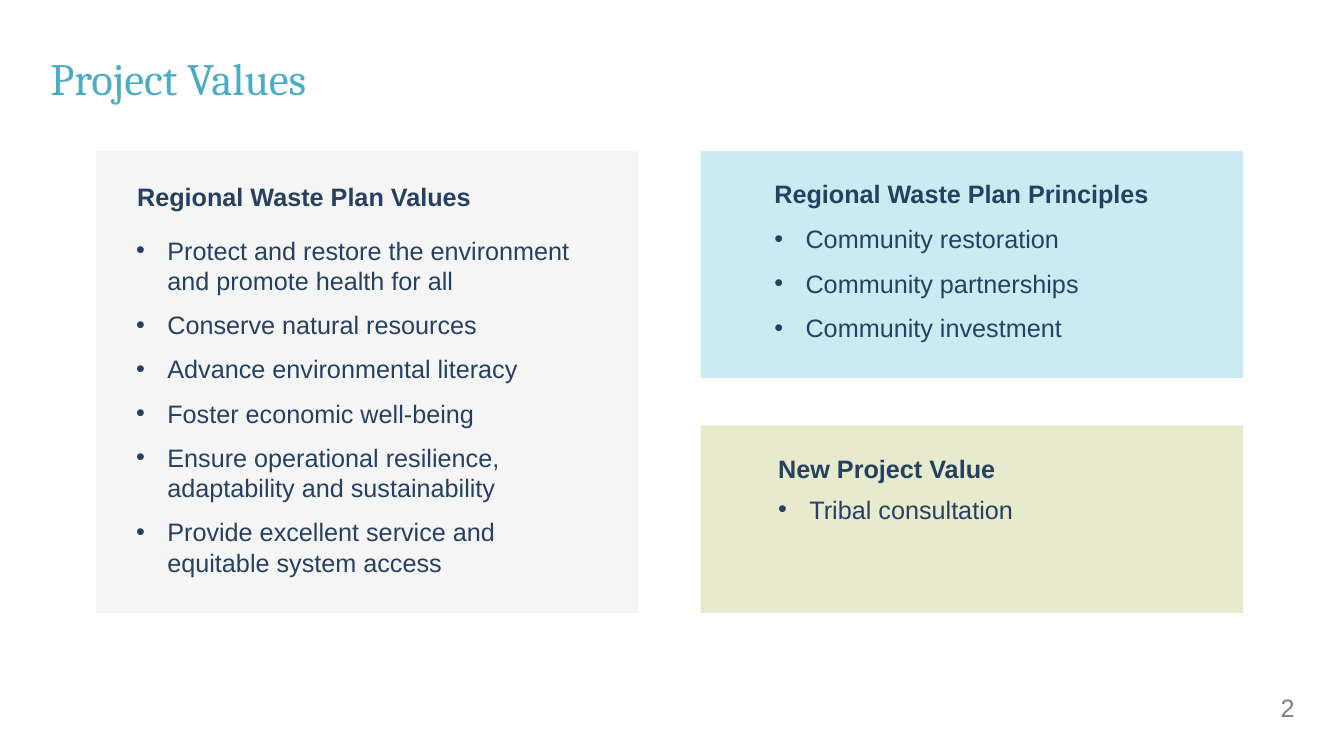
from lxml import etree
from pptx import Presentation
from pptx.dml.color import RGBColor
from pptx.enum import shapes, text
from pptx.oxml import ns
from pptx.util import Inches, Pt

COLORS = {"title": "4BACC6", "body": "254061", "number": "808080",
          "values": "D9D9D9", "principles": "2CB0C8", "new": "A3AD38"}
PANELS = [
    ("values", (0.95, 1.5, 5.38, 4.58), (0.31, 0.25), (0.3, 0.78), 4.77, 10,
     "Regional Waste Plan Values",
     ["Protect and restore the environment and promote health for all",
      "Conserve natural resources",
      "Advance environmental literacy",
      "Foster economic well-being",
      "Ensure operational resilience, adaptability and sustainability",
      "Provide excellent service and equitable system access"]),
    ("principles", (6.95, 1.5, 5.38, 2.25), (0.63, 0.22), (0.63, 0.67), 4.13, 10,
     "Regional Waste Plan Principles",
     ["Community restoration", "Community partnerships", "Community investment"]),
    ("new", (6.95, 4.22, 5.38, 1.86), (0.67, 0.23), (0.67, 0.63), 4.13, 6,
     "New Project Value",
     ["Tribal consultation"]),
]


def write(sp, box, lines, color, size=18, font="Arial", bold=False,
          align=text.PP_ALIGN.LEFT, after=0):
    """Place a text shape and fill it with one paragraph per line."""
    sp.left, sp.top, sp.width, sp.height = [Inches(v) for v in box]
    tf = sp.text_frame
    tf.text = "\n".join(lines)
    tf.word_wrap = True
    tf.auto_size = text.MSO_AUTO_SIZE.NONE
    tf.vertical_anchor = text.MSO_ANCHOR.TOP
    for p in tf.paragraphs:
        p.alignment = align
        p.space_before, p.space_after = Pt(0), Pt(after)
        for r in p.runs:
            r.font.name, r.font.size, r.font.bold = font, Pt(size), bold
            r.font.color.rgb = RGBColor.from_string(COLORS[color])
    return tf


def add_bullets(tf):
    """Give every paragraph a hanging round bullet."""
    for p in tf.paragraphs:
        pPr = p._p.get_or_add_pPr()
        pPr.set("marL", str(Inches(0.31)))
        pPr.set("indent", str(Inches(-0.31)))
        etree.SubElement(pPr, ns.qn("a:buFont")).set("typeface", "Arial")
        etree.SubElement(pPr, ns.qn("a:buChar")).set("char", "•")


def add_text_box(s):
    """Add an empty text box to be placed later."""
    return s.shapes.add_textbox(0, 0, 0, 0)


def add_panel(s, holders, color, box, head_at, list_at, list_w, after, heading, items):
    """Build a tinted panel behind a heading and a bulleted list."""
    x, y, w, h = box
    sp = s.shapes.add_shape(shapes.MSO_SHAPE.RECTANGLE, *[Inches(v) for v in box])
    sp.shadow.inherit = False
    sp.fill.solid()
    sp.fill.fore_color.rgb = RGBColor.from_string(COLORS[color])
    sp.line.fill.background()
    tint = sp._element.spPr.find(".//" + ns.qn("a:srgbClr"))
    etree.SubElement(tint, ns.qn("a:alpha")).set("val", "25000")
    s.shapes._spTree.insert(2, sp._element)

    head, body = holders
    write(head, (x + head_at[0], y + head_at[1], 4, 0.4), [heading], "body", bold=True)
    list_box = (x + list_at[0], y + list_at[1], list_w, h - list_at[1] - 0.25)
    add_bullets(write(body, list_box, items, "body", after=after))


def add_title(s, box):
    """Set the slide title without insets."""
    tf = write(s.shapes.title, box, ["Project Values"], "title", 32, "Cambria")
    tf.margin_left = tf.margin_top = tf.margin_right = tf.margin_bottom = 0


def add_values_slide(prs):
    """Compose the project values slide."""
    s = prs.slides.add_slide(prs.slide_layouts.get_by_name("Comparison"))
    add_title(s, (0.5, 0.5, 8.25, 0.75))
    holders = list(s.placeholders)[1:] + [add_text_box(s), add_text_box(s)]
    for i, panel in enumerate(PANELS):
        add_panel(s, holders[2 * i:2 * i + 2], *panel)
    write(add_text_box(s), (10.94, 6.82, 2, 0.42), ["2"], "number",
          align=text.PP_ALIGN.RIGHT)


def main():
    """Create and save the presentation."""
    prs = Presentation()
    prs.slide_width, prs.slide_height = Inches(13.33), Inches(7.5)
    add_values_slide(prs)
    prs.save("out.pptx")


if __name__ == "__main__":
    main()
